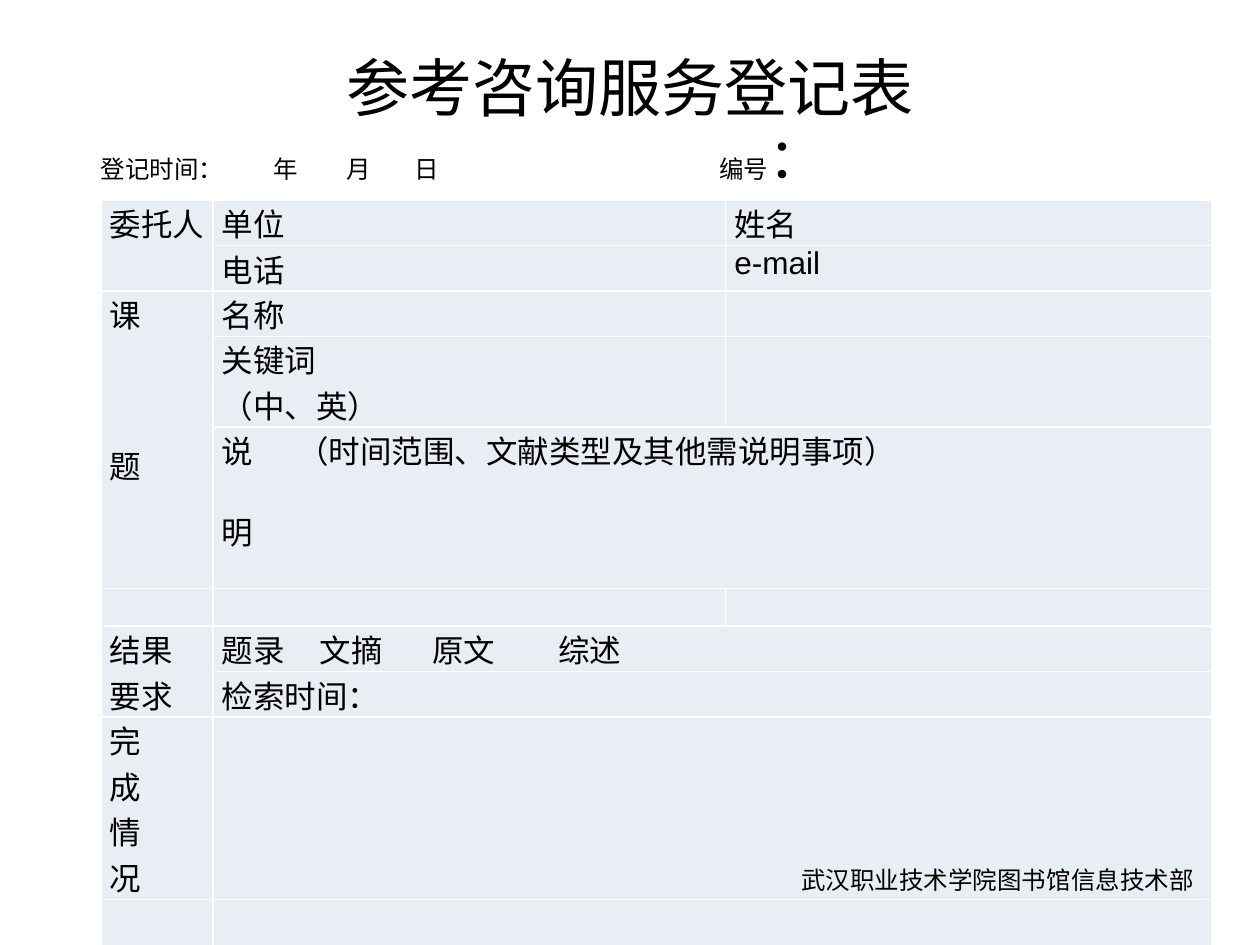
"""Build the registration form slide for a reference consultation service."""
from lxml.etree import SubElement
from pptx import Presentation
from pptx.dml.color import RGBColor
from pptx.enum.text import MSO_ANCHOR, MSO_AUTO_SIZE, PP_ALIGN
from pptx.oxml.ns import qn
from pptx.util import Inches, Pt

BLACK = RGBColor(0x00, 0x00, 0x00)
WHITE = RGBColor(0xFF, 0xFF, 0xFF)
PALE_BLUE = RGBColor(0xE9, 0xED, 0xF4)


def format_runs(paragraph, font_name, size):
    for run in paragraph.runs:
        run.font.name = font_name
        run.font.size = Pt(size)
        run.font.color.rgb = BLACK


def add_tab_stops(paragraph, positions):
    tab_list = SubElement(paragraph._p.get_or_add_pPr(), qn("a:tabLst"))
    for position in positions:
        SubElement(tab_list, qn("a:tab"), pos=str(Inches(position)), algn="l")


presentation = Presentation()
presentation.slide_width = Inches(10)
presentation.slide_height = Inches(7.5)
slide = presentation.slides.add_slide(presentation.slide_layouts[6])

title = slide.shapes.add_textbox(Inches(0.5), Inches(0.3), Inches(9), Inches(1.32))
title_frame = title.text_frame
title_frame.word_wrap = True
title_frame.vertical_anchor = MSO_ANCHOR.MIDDLE
title_frame.margin_bottom = Inches(0.6)
title_frame.text = "参考咨询服务登记表"
title_frame.paragraphs[0].alignment = PP_ALIGN.CENTER
format_runs(title_frame.paragraphs[0], "Calibri", 36)

heading = slide.shapes.add_textbox(Inches(0.6), Inches(0.92), Inches(9), Inches(4.95))
heading.text_frame.word_wrap = True
paragraph = heading.text_frame.paragraphs[0]
paragraph.space_before = Pt(6.4)
for text, size in ((" ", 32), ("登记时间：\t年\t月\t日\t编号", 14), ("：", 32)):
    run = paragraph.add_run()
    run.text = text
    run.font.name = "Calibri"
    run.font.size = Pt(size)
    run.font.color.rgb = BLACK
add_tab_stops(paragraph, (1.47, 2.05, 2.59, 5.01))

column_widths = (0.89, 4.07, 3.86)
row_heights = (0.36, 0.36, 0.36, 0.72, 1.28, 0.28, 0.36, 0.36, 1.45, 0.39)
table = slide.shapes.add_table(
    len(row_heights), len(column_widths), Inches(0.8), Inches(1.59),
    Inches(sum(column_widths)), Inches(sum(row_heights))).table
table.first_row = False
table.horz_banding = False
for column, width in zip(table.columns, column_widths):
    column.width = Inches(width)
for row, height in zip(table.rows, row_heights):
    row.height = Inches(height)

for cell in table.iter_cells():
    cell.margin_left = cell.margin_right = Inches(0.07)
    cell.margin_top = cell.margin_bottom = 0
    properties = cell._tc.get_or_add_tcPr()
    for side in ("a:lnL", "a:lnR", "a:lnT", "a:lnB"):
        line = SubElement(properties, qn(side), w=str(Pt(1)))
        line_fill = SubElement(line, qn("a:solidFill"))
        SubElement(line_fill, qn("a:srgbClr"), val=str(WHITE))
    cell.fill.solid()
    cell.fill.fore_color.rgb = PALE_BLUE

merges = (((0, 0), (1, 0)), ((2, 0), (4, 0)), ((6, 0), (7, 0)),
          *(((row, 1), (row, 2)) for row in (4, 6, 7, 8, 9)))
for first, last in merges:
    table.cell(*first).merge(table.cell(*last))

cell_texts = {
    (0, 0): "委托人", (0, 1): "单位", (0, 2): "姓名",
    (1, 1): "电话", (1, 2): "e-mail",
    (2, 0): "课\n题", (2, 1): "名称",
    (3, 1): "关键词\n（中、英）",
    (4, 1): "说\t（时间范围、文献类型及其他需说明事项）\n明",
    (6, 0): "结果\n要求", (6, 1): "题录\t文摘\t原文\t综述",
    (7, 1): "检索时间：",
    (8, 0): "完\n成\n情\n况",
}
for position, text in cell_texts.items():
    text_frame = table.cell(*position).text_frame
    text_frame.text = text
    for paragraph in text_frame.paragraphs:
        paragraph.alignment = PP_ALIGN.JUSTIFY
        format_runs(paragraph, "Arial", 18)

for position, gap in (((2, 0), 60), ((4, 1), 20)):
    table.cell(*position).text_frame.paragraphs[1].space_before = Pt(gap)
for position, stops in (((4, 1), (0.6,)), ((6, 1), (0.78, 1.67, 2.67))):
    add_tab_stops(table.cell(*position).text_frame.paragraphs[0], stops)

department = slide.shapes.add_textbox(Inches(6.26), Inches(6.82), Inches(3.34), Inches(0.34))
department.text_frame.word_wrap = False
department.text_frame.auto_size = MSO_AUTO_SIZE.SHAPE_TO_FIT_TEXT
department.text_frame.text = "武汉职业技术学院图书馆信息技术部"
format_runs(department.text_frame.paragraphs[0], "Arial", 14)

presentation.save("out.pptx")
